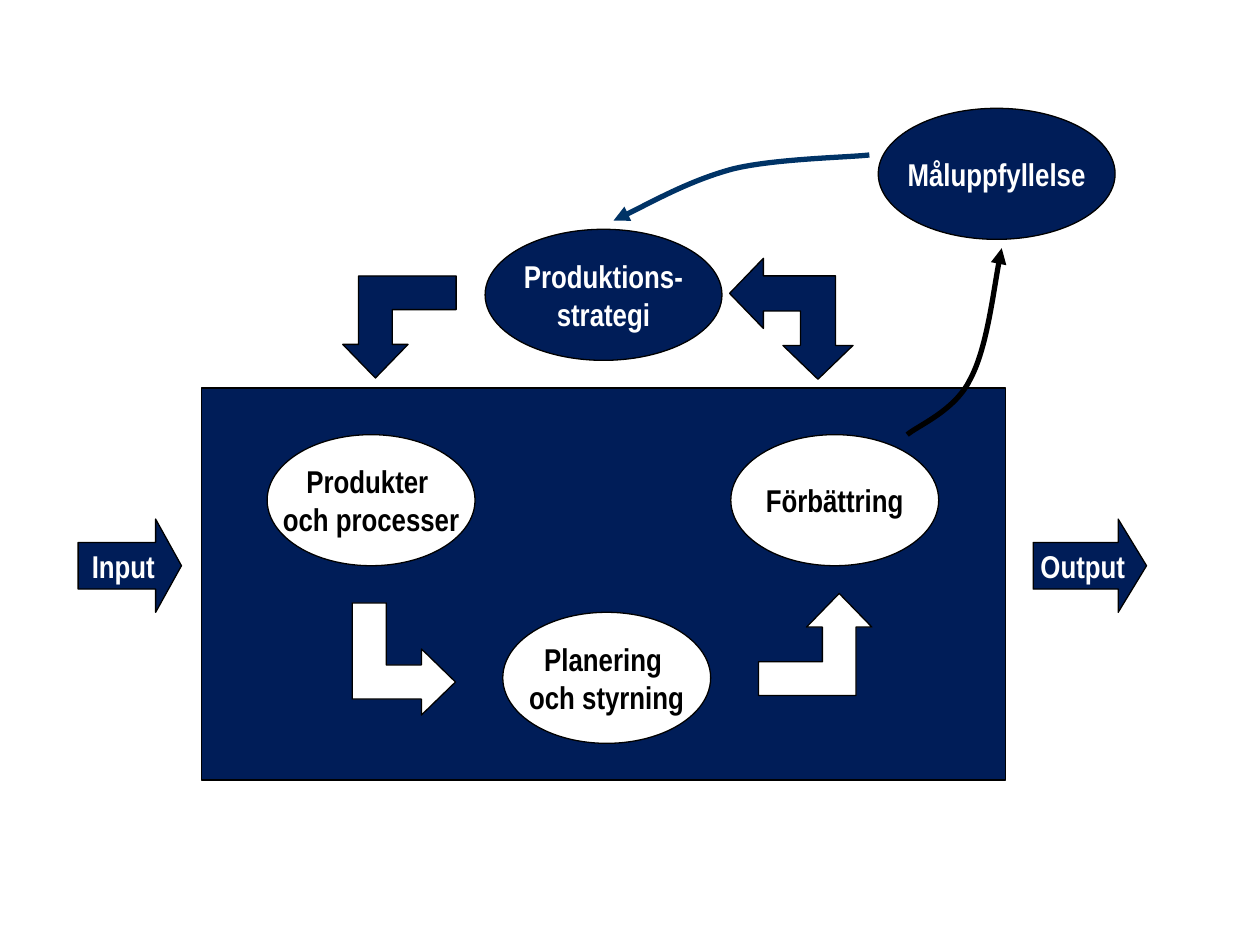
from dataclasses import dataclass

from lxml import etree
from pptx import Presentation
from pptx.dml.color import RGBColor
from pptx.enum import shapes, text
from pptx.oxml import ns
from pptx.util import Inches, Pt

SHAPE = shapes.MSO_SHAPE


@dataclass(frozen=True)
class Theme:
    """Colours, font and sizes of the slide."""
    navy: RGBColor = RGBColor(0x00, 0x1D, 0x58)
    blue: RGBColor = RGBColor(0x00, 0x33, 0x66)
    white: RGBColor = RGBColor(0xFF, 0xFF, 0xFF)
    black: RGBColor = RGBColor(0, 0, 0)
    font: str = "Arial Narrow"
    size: Pt = Pt(18)
    outline: Pt = Pt(0.75)
    curve: Pt = Pt(3)


THEME = Theme()


def add_figure(slide, kind, box, fill, label="", color=None, adjust=(), rotation=0):
    """Add an outlined preset shape with an optional bold centred label."""
    sp = slide.shapes.add_shape(kind, *(Inches(v) for v in box))
    sp.shadow.inherit = False
    sp.rotation = rotation
    sp.fill.solid()
    sp.fill.fore_color.rgb = fill
    sp.line.color.rgb = THEME.black
    sp.line.width = THEME.outline
    for i, value in enumerate(adjust):
        sp.adjustments[i] = value
    if label:
        tf = sp.text_frame
        tf.text = label
        tf.word_wrap = False
        tf.vertical_anchor = text.MSO_ANCHOR.MIDDLE
        for p in tf.paragraphs:
            p.alignment = text.PP_ALIGN.CENTER
            for r in p.runs:
                r.font.name = THEME.font
                r.font.size = THEME.size
                r.font.bold = True
                r.font.color.rgb = color
    return sp


def add_bent_arrow(slide, box, fill, rotation=0):
    """Add a right-angled arrow, turned clockwise from pointing up."""
    add_figure(slide, SHAPE.BENT_UP_ARROW, box, fill,
               adjust=(0.33, 0.32, 0.33), rotation=rotation)


def add_curve(slide, points, color):
    """Add an open Bézier curve with an arrowhead at its end."""
    pts = [(Inches(x), Inches(y)) for x, y in points]
    fb = slide.shapes.build_freeform(*pts[0])
    fb.add_line_segments(pts[1:], close=False)
    sp = fb.convert_to_shape()
    sp.shadow.inherit = False
    sp.fill.background()
    sp.line.color.rgb = color
    sp.line.width = THEME.curve
    path = sp._element.spPr.find(".//" + ns.qn("a:path"))
    segments = path.findall(ns.qn("a:lnTo"))
    for i in range(0, len(segments), 3):
        bezier = etree.SubElement(path, ns.qn("a:cubicBezTo"))
        for segment in segments[i:i + 3]:
            bezier.append(segment[0])
            path.remove(segment)
    etree.SubElement(sp.line._get_or_add_ln(), ns.qn("a:tailEnd"), type="triangle")


def add_process(slide, x, y, w, h):
    """Place the process panel with its three steps and linking arrows."""
    add_figure(slide, SHAPE.RECTANGLE, (x, y, w, h), THEME.navy)
    steps = ((0.52, 0.37, "Produkter \noch processer"),
             (4.2, 0.37, "Förbättring"),
             (2.39, 1.78, "Planering \noch styrning"))
    for dx, dy, label in steps:
        add_figure(slide, SHAPE.OVAL, (x + dx, y + dy, 1.65, 1.04),
                   THEME.white, label, THEME.black)
    add_bent_arrow(slide, (x + 1.16, y + 1.74, 0.89, 0.82), THEME.white, 90)
    add_bent_arrow(slide, (x + 4.42, y + 1.63, 0.9, 0.81), THEME.white)


def add_flow(slide, x, y, w, h, label):
    """Place a labelled arrow that leads into or out of the process."""
    add_figure(slide, SHAPE.RIGHT_ARROW, (x, y, w, h), THEME.navy, label,
               THEME.white, adjust=(0.5, 0.25 * w / h))


def add_strategy(slide, x, y, w, h):
    """Place the strategy and goal ellipses with the arrows around them."""
    ew, eh = 1.88, 1.04
    add_figure(slide, SHAPE.OVAL, (x + 1.13, y + 0.96, ew, eh), THEME.navy,
               "Produktions-\nstrategi", THEME.white)
    add_bent_arrow(slide, (x, y + 1.33, 0.9, 0.81), THEME.navy, 180)
    add_figure(slide, SHAPE.LEFT_UP_ARROW, (x + 3.08, y + 1.18, 0.96, 0.98),
               THEME.navy, adjust=(0.29, 0.29, 0.28), rotation=270)
    add_figure(slide, SHAPE.OVAL, (x + w - ew, y, ew, eh), THEME.navy,
               "Måluppfyllelse", THEME.white)
    curves = (
        (THEME.blue, ((4.18, 0.37), (4, 0.39), (3.43, 0.4), (3.1, 0.48),
                      (2.76, 0.57), (2.35, 0.8), (2.15, 0.89))),
        (THEME.black, ((4.48, h), (4.56, 2.52), (4.86, 2.4), (4.98, 2.15),
                       (5.11, 1.91), (5.18, 1.33), (5.23, 1.11))),
    )
    for color, points in curves:
        add_curve(slide, [(x + dx, y + dy) for dx, dy in points], color)


def main():
    """Build the slide and save it."""
    prs = Presentation()
    prs.slide_width, prs.slide_height = Inches(10), Inches(7.5)
    slide = prs.slides.add_slide(prs.slide_layouts[6])
    add_process(slide, 1.6, 3.08, 6.38, 3.11)
    add_flow(slide, 0.62, 4.12, 0.82, 0.74, "Input")
    add_flow(slide, 8.2, 4.12, 0.9, 0.74, "Output")
    add_strategy(slide, 2.72, 0.86, 6.13, 2.59)
    prs.save("out.pptx")


if __name__ == "__main__":
    main()
